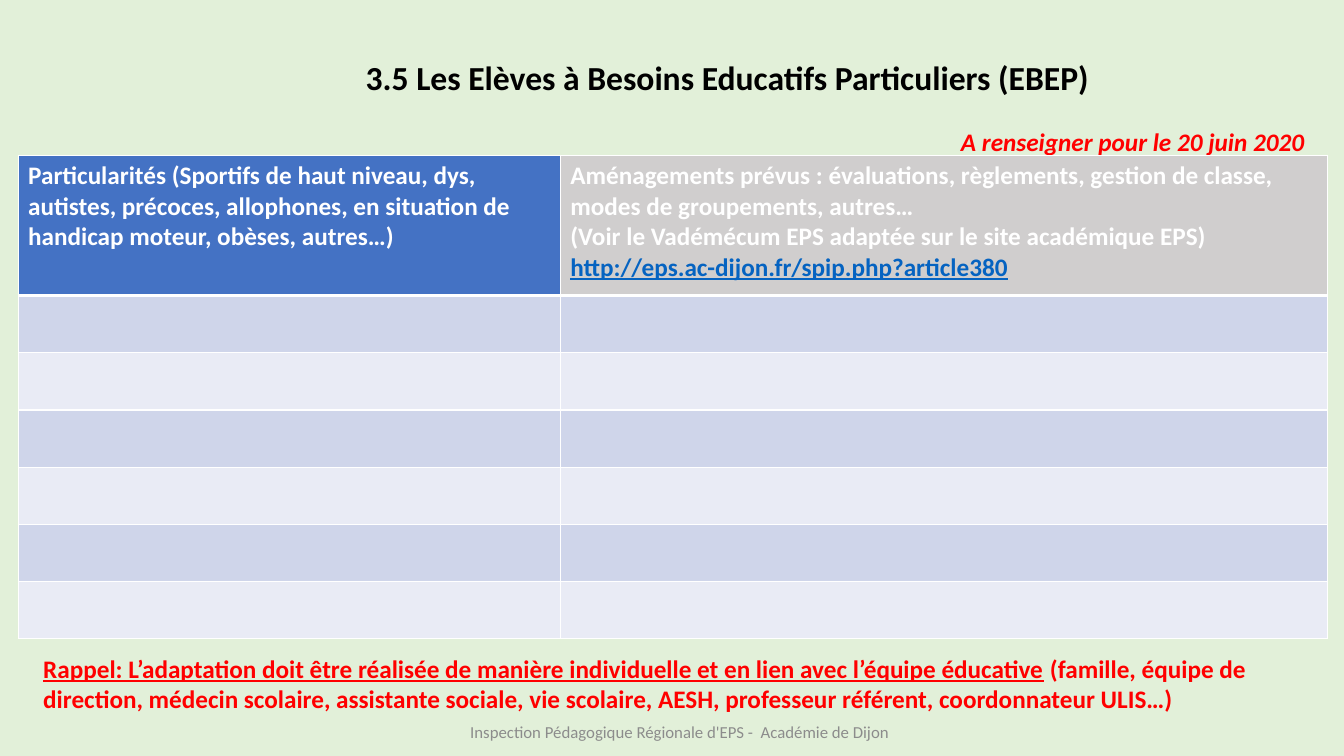
from dataclasses import dataclass

from lxml.etree import SubElement
from pptx import Presentation
from pptx.dml.color import RGBColor
from pptx.enum.text import MSO_ANCHOR as Anchor, PP_ALIGN as Align
from pptx.oxml.ns import qn
from pptx.util import Inches, Pt


@dataclass(frozen=True)
class Theme:
    font: str = "Calibri"
    back: str = "E2F0D9"
    ink: str = "000000"
    alert: str = "FF0000"
    white: str = "FFFFFF"
    link: str = "0563C1"
    muted: str = "8C8C8C"
    heads: tuple = ("4472C4", "D0CECE")
    bands: tuple = ("CFD5EA", "E9EBF5")
    title: int = 24
    body: int = 18
    small: int = 12


THEME = Theme()
WIDE, HIGH = Inches(13.33), Inches(7.5)
HEADS = (
    "Particularités (Sportifs de haut niveau, dys, autistes, précoces, "
    "allophones, en situation de handicap moteur, obèses, autres…)",
    "Aménagements prévus : évaluations, règlements, gestion de classe, "
    "modes de groupements, autres…\n"
    "(Voir le Vadémécum EPS adaptée sur le site académique EPS)\n"
    "http://eps.ac-dijon.fr/spip.php?article380",
)
RULE = ("Rappel: L’adaptation doit être réalisée de manière individuelle "
        "et en lien avec l’équipe éducative")
TEAM = (" (famille, équipe de direction, médecin scolaire, assistante sociale, "
        "vie scolaire, AESH, professeur référent, coordonnateur ULIS…)")


def area(left, top, width, height):
    """Turn percentages of the slide into lengths."""
    return (int(WIDE * left / 100), int(HIGH * top / 100),
            int(WIDE * width / 100), int(HIGH * height / 100))


def style(frame, size, color, bold=True, align=Align.LEFT):
    for para in frame.paragraphs:
        para.alignment = align
        for run in para.runs:
            font = run.font
            font.name, font.size, font.bold = THEME.font, Pt(size), bold
            font.color.rgb = RGBColor.from_string(color)


def add_title(slide, box, text):
    title = slide.shapes.title
    title.left, title.top, title.width, title.height = box
    frame = title.text_frame
    frame.text = text
    frame.vertical_anchor = Anchor.MIDDLE
    style(frame, THEME.title, THEME.ink, align=Align.CENTER)


def add_text(slide, box, *parts):
    """Add a wrapping text box with one run per part."""
    frame = slide.shapes.add_textbox(*box).text_frame
    frame.word_wrap = True
    for part in parts:
        frame.paragraphs[0].add_run().text = part
    return frame


def add_date(slide, box):
    frame = add_text(slide, box, "A renseigner pour le 20 juin 2020")
    style(frame, THEME.body, THEME.alert, align=Align.RIGHT)
    frame.paragraphs[0].runs[0].font.italic = True


def add_note(slide, box):
    frame = add_text(slide, box, RULE, TEAM)
    style(frame, THEME.body, THEME.alert)
    frame.paragraphs[0].runs[0].font.underline = True


def add_foot(slide, box):
    frame = add_text(slide, box,
                     "Inspection Pédagogique Régionale d'EPS -  Académie de Dijon")
    frame.vertical_anchor = Anchor.MIDDLE
    style(frame, THEME.small, THEME.muted, bold=False, align=Align.CENTER)


def paint(cell, color, top=1, base=1):
    """Give a cell white borders, then its fill."""
    props = cell._tc.get_or_add_tcPr()
    for side, width in (("L", 1), ("R", 1), ("T", top), ("B", base)):
        line = SubElement(props, qn(f"a:ln{side}"), w=str(Pt(width)))
        fill = SubElement(line, qn("a:solidFill"))
        SubElement(fill, qn("a:srgbClr"), val=THEME.white)
    cell.fill.solid()
    cell.fill.fore_color.rgb = RGBColor.from_string(color)


def add_grid(slide, box, count=6):
    width, height = box[2:]
    table = slide.shapes.add_table(count + 1, len(HEADS), *box).table
    for col, share in zip(table.columns, (0.414, 0.586)):
        col.width = int(width * share)
    head = int(height * 0.29)
    for num, row in enumerate(table.rows):
        row.height = (height - head) // count if num else head
        for col, cell in enumerate(row.cells):
            if num:
                paint(cell, THEME.bands[(num - 1) % 2], top=3 if num == 1 else 1)
            else:
                paint(cell, THEME.heads[col], base=3)
                cell.text_frame.text = HEADS[col]
                style(cell.text_frame, THEME.body, THEME.white)
    link = table.cell(0, 1).text_frame.paragraphs[-1].runs[0].font
    link.color.rgb = RGBColor.from_string(THEME.link)
    link.underline = True


def main():
    deck = Presentation()
    deck.slide_width, deck.slide_height = WIDE, HIGH
    slide = deck.slides.add_slide(deck.slide_layouts[5])
    slide.background.fill.solid()
    slide.background.fill.fore_color.rgb = RGBColor.from_string(THEME.back)
    add_title(slide, area(9.6, 6.5, 89.05, 7.3),
              "3.5 Les Elèves à Besoins Educatifs Particuliers (EBEP)")
    add_date(slide, area(45, 16.1, 52.8, 5.3))
    add_grid(slide, area(1.35, 20.53, 97.45, 64))
    add_note(slide, area(2.48, 85.73, 95.12, 9.47))
    add_foot(slide, area(33.7, 94.13, 33.76, 5.33))
    deck.save("out.pptx")


if __name__ == "__main__":
    main()
